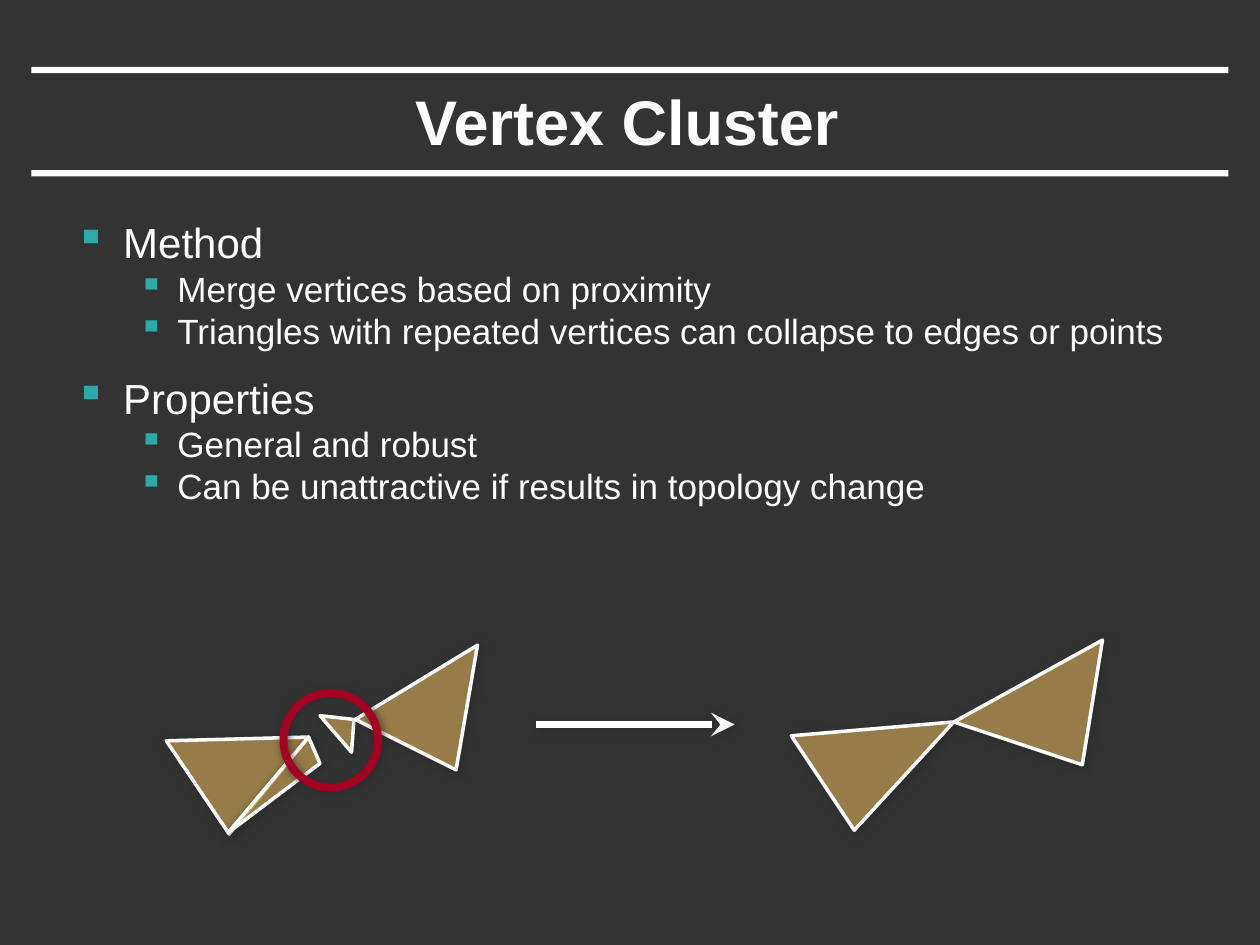
from dataclasses import dataclass
from lxml.etree import SubElement
from pptx import Presentation
from pptx.dml.color import RGBColor as RGB
from pptx.enum.shapes import MSO_CONNECTOR as LINK, MSO_SHAPE as SHAPE
from pptx.enum.text import MSO_ANCHOR as ANCHOR, PP_ALIGN as ALIGN
from pptx.oxml.ns import qn
from pptx.util import Inches, Pt


@dataclass(frozen=True)
class Theme:
    font: str = "Arial"
    back: str = "333333"
    ink: str = "FFFFFF"
    bullet: str = "2AABA8"
    face: str = "FFCC66"
    ring: str = "A50021"
    shade: str = "292929"
    title: int = 36
    sizes: tuple = (24, 20)
    thin: float = 2
    thick: float = 4.5


THEME = Theme()
INDENTS = ((0.38, -0.38), (0.81, -0.31))
BODY = [
    (0, "Method"),
    (1, "Merge vertices based on proximity"),
    (1, "Triangles with repeated vertices can collapse to edges or points"),
    (0, "Properties"),
    (1, "General and robust"),
    (1, "Can be unattractive if results in topology change"),
]
BEFORE = [
    [(1.32, 5.88), (2.45, 5.85), (1.82, 6.62)],
    [(2.81, 5.71), (2.79, 5.97), (2.54, 5.68)],
    [(1.81, 6.61), (2.45, 5.85), (2.54, 6.06)],
    [(2.82, 5.71), (3.79, 5.12), (3.62, 6.11)],
]
AFTER = [
    [(6.28, 5.84), (7.57, 5.73), (6.78, 6.59)],
    [(7.57, 5.73), (8.75, 5.08), (8.59, 6.07)],
]


def color(code):
    return RGB.from_string(code)


def inches(values):
    return [Inches(v) for v in values]


def apply(target, values):
    for name, value in values.items():
        setattr(target, name, value)


def paint(shape, code):
    shape.fill.solid()
    shape.fill.fore_color.rgb = color(code)


def stroke(shape, code, width):
    shape.line.color.rgb = color(code)
    shape.line.width = Pt(width)


def add_shadow(shape, alpha):
    """Cast a soft shadow to the lower right; call after fill and line."""
    effects = SubElement(shape.element.spPr, qn("a:effectLst"))
    outer = SubElement(effects, qn("a:outerShdw"), blurRad=str(Pt(5)),
                       dist=str(Pt(1.4)), dir=str(45 * 60000), rotWithShape="0")
    tint = SubElement(outer, qn("a:srgbClr"), val=THEME.shade)
    SubElement(tint, qn("a:alpha"), val=str(alpha * 1000))


def add_bar(slide, top):
    bar = slide.shapes.add_shape(SHAPE.RECTANGLE, *inches((0.25, top, 9.5, 0.05)))
    bar.shadow.inherit = False
    paint(bar, THEME.ink)
    bar.line.fill.background()


def add_frame(slide, box, anchor):
    frame = slide.shapes.add_textbox(*inches(box)).text_frame
    apply(frame, {"word_wrap": True, "vertical_anchor": anchor})
    return frame


def write(para, text, size, bold=False):
    run = para.add_run()
    run.text = text
    apply(run.font, {"name": THEME.font, "size": Pt(size), "bold": bold})
    run.font.color.rgb = color(THEME.ink)


def add_title(slide, text):
    frame = add_frame(slide, (0.74, 0.58, 8.47, 0.75), ANCHOR.MIDDLE)
    para = frame.paragraphs[0]
    para.alignment = ALIGN.CENTER
    write(para, text, THEME.title, bold=True)


def add_bullet(para, level):
    left, hang = INDENTS[level]
    props = para._p.get_or_add_pPr()
    props.set("marL", str(Inches(left)))
    props.set("indent", str(Inches(hang)))
    tint = SubElement(props, qn("a:buClr"))
    SubElement(tint, qn("a:srgbClr"), val=THEME.bullet)
    SubElement(props, qn("a:buChar"), char="▪")


def add_body(slide, items):
    frame = add_frame(slide, (0.5, 1.67, 9, 5.5), ANCHOR.TOP)
    for row, (level, text) in enumerate(items):
        para = frame.add_paragraph() if row else frame.paragraphs[0]
        size = THEME.sizes[level]
        gap = size / 2 if row and level == 0 else 0
        apply(para, {"level": level, "space_before": Pt(gap)})
        add_bullet(para, level)
        write(para, text, size)


def add_face(shapes, points):
    start, *rest = [inches(point) for point in points]
    pen = shapes.build_freeform(*start)
    pen.add_line_segments(rest, close=True)
    face = pen.convert_to_shape()
    paint(face, THEME.face)
    tint = face.element.spPr.find(qn("a:solidFill"))[0]
    SubElement(tint, qn("a:alpha"), val="50000")
    stroke(face, THEME.ink, THEME.thin)
    add_shadow(face, 100)


def add_ring(slide):
    ring = slide.shapes.add_shape(SHAPE.OVAL, *inches((2.25, 5.5, 0.75, 0.75)))
    ring.fill.background()
    stroke(ring, THEME.ring, THEME.thick)
    add_shadow(ring, 75)


def add_arrow(slide):
    ends = inches((4.25, 5.75, 5.83, 5.75))
    arrow = slide.shapes.add_connector(LINK.STRAIGHT, *ends)
    stroke(arrow, THEME.ink, THEME.thick)
    SubElement(arrow.element.spPr.find(qn("a:ln")), qn("a:tailEnd"), type="stealth")
    add_shadow(arrow, 75)


def main():
    deck = Presentation()
    apply(deck, {"slide_width": Inches(10), "slide_height": Inches(7.5)})
    slide = deck.slides.add_slide(deck.slide_layouts[6])
    paint(slide.background, THEME.back)
    for top in (1.35, 0.53):
        add_bar(slide, top)
    add_title(slide, "Vertex Cluster")
    add_body(slide, BODY)
    for points in BEFORE:
        add_face(slide.shapes, points)
    add_ring(slide)
    add_arrow(slide)
    group = slide.shapes.add_group_shape()
    for points in AFTER:
        add_face(group.shapes, points)
    deck.save("out.pptx")


if __name__ == "__main__":
    main()
